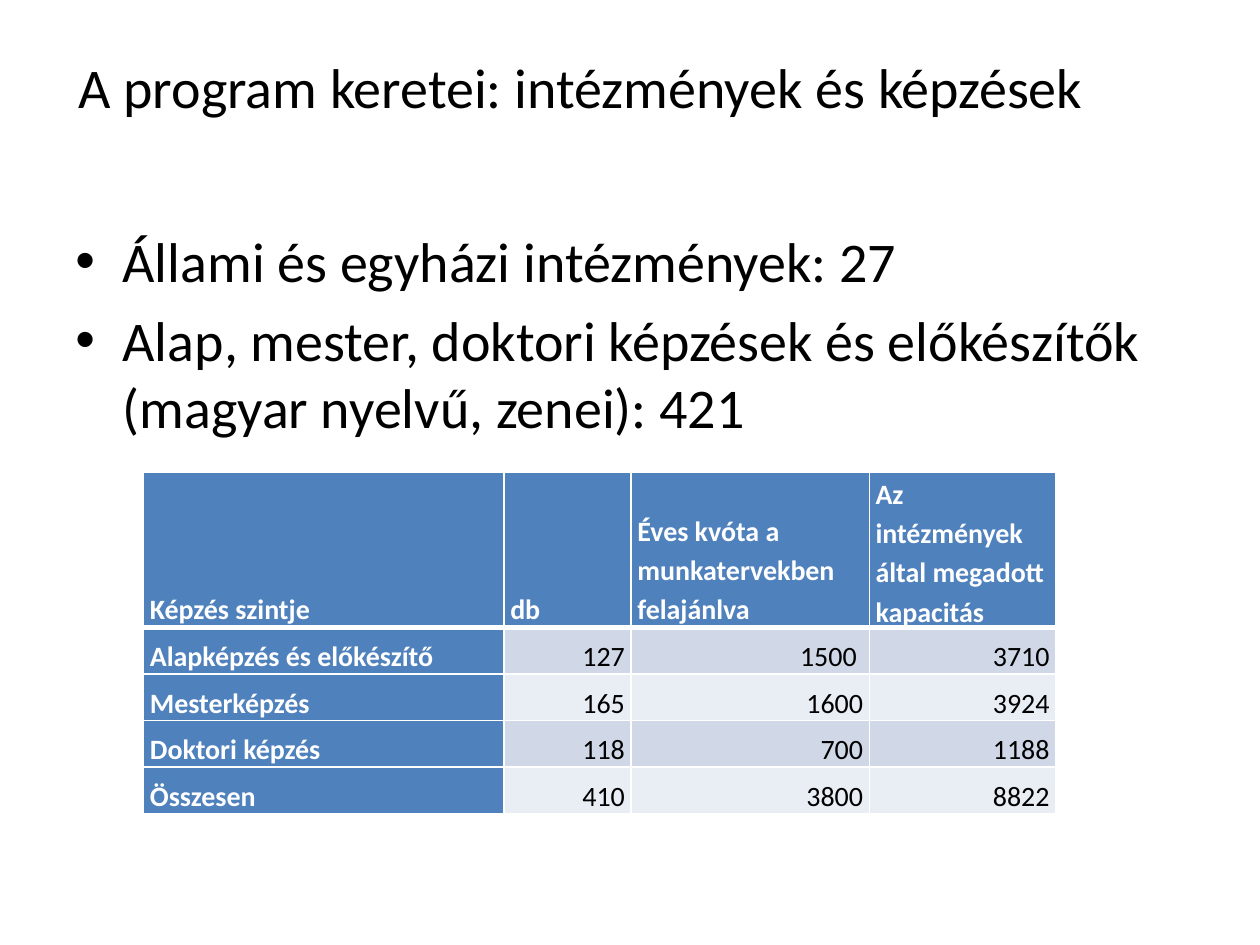
from dataclasses import dataclass

from lxml import etree
from pptx import Presentation
from pptx.dml.color import RGBColor
from pptx.enum import text
from pptx.oxml import ns
from pptx.util import Pt

FONT = "Calibri"
BLACK = RGBColor(0x00, 0x00, 0x00)
WHITE = RGBColor(0xFF, 0xFF, 0xFF)
BLUE = RGBColor(0x4F, 0x81, 0xBD)
BANDS = (RGBColor(0xD0, 0xD8, 0xE8), RGBColor(0xE9, 0xED, 0xF4))

BODY_SIZE = 32
TABLE_SIZE = 16
COLUMN_WIDTHS = (205.9, 72.7, 136.1, 106.6)
HEADER_HEIGHT = 88.6
ROW_HEIGHT = 26.6


@dataclass(frozen=True)
class Area:
    left: float
    top: float
    width: float
    height: float

    def lengths(self) -> tuple:
        return Pt(self.left), Pt(self.top), Pt(self.width), Pt(self.height)


@dataclass(frozen=True)
class Training:
    level: str
    count: str
    quota: str
    capacity: str

    def values(self) -> tuple:
        return self.level, self.count, self.quota, self.capacity


TITLE = "A program keretei: intézmények és képzések"
POINTS = (
    "Állami és egyházi intézmények: 27",
    "Alap, mester, doktori képzések és előkészítők (magyar nyelvű, zenei): 421",
)
TRAININGS = (
    Training("Képzés szintje", "db", "Éves kvóta a munkatervekben felajánlva",
             "Az intézmények által megadott kapacitás"),
    Training("Alapképzés és előkészítő", "127", "1500 ", "3710"),
    Training("Mesterképzés", "165", "1600", "3924"),
    Training("Doktori képzés", "118", "700", "1188"),
    Training("Összesen", "410", "3800", "8822"),
)
TITLE_AREA = Area(36.7, 9.4, 590.4, 79.2)
BODY_AREA = Area(36, 126, 635.8, 356.4)
TABLE_AREA = Area(82.1, 270, sum(COLUMN_WIDTHS),
                  HEADER_HEIGHT + ROW_HEIGHT * (len(TRAININGS) - 1))


def add_span(para, words: str, size: float, color: RGBColor = BLACK,
             bold: bool = False) -> None:
    span = para.add_run()
    span.text = words
    span.font.name = FONT
    span.font.size = Pt(size)
    span.font.bold = bold
    span.font.color.rgb = color


def add_text_frame(page, area: Area):
    frame = page.shapes.add_textbox(*area.lengths()).text_frame
    frame.word_wrap = True
    return frame


def add_title(page) -> None:
    frame = add_text_frame(page, TITLE_AREA)
    frame.vertical_anchor = text.MSO_ANCHOR.MIDDLE
    para = frame.paragraphs[0]
    para.alignment = text.PP_ALIGN.CENTER
    add_span(para, TITLE, BODY_SIZE)


def set_bullet(para) -> None:
    """Give the paragraph a round bullet with a hanging indent."""
    properties = para._p.get_or_add_pPr()
    properties.set("marL", str(Pt(27)))
    properties.set("indent", str(-Pt(27)))
    etree.SubElement(properties, ns.qn("a:buFont"), typeface="Arial")
    etree.SubElement(properties, ns.qn("a:buChar"), char="•")


def add_points(page) -> None:
    frame = add_text_frame(page, BODY_AREA)
    for index, words in enumerate(POINTS):
        para = frame.add_paragraph() if index else frame.paragraphs[0]
        para.space_before = Pt(0.2 * BODY_SIZE)
        set_bullet(para)
        add_span(para, words, BODY_SIZE)


def set_borders(cell, bottom: float) -> None:
    """Draw white cell borders, placed before the fill as the schema asks."""
    properties = cell._tc.get_or_add_tcPr()
    widths = {"a:lnL": 1, "a:lnR": 1, "a:lnT": 1, "a:lnB": bottom}
    for index, (tag, width) in enumerate(widths.items()):
        line = etree.Element(ns.qn(tag), w=str(Pt(width)))
        fill = etree.SubElement(line, ns.qn("a:solidFill"))
        etree.SubElement(fill, ns.qn("a:srgbClr"), val=str(WHITE))
        properties.insert(index, line)


def fill_cell(cell, words: str, row: int, column: int) -> None:
    heading = row == 0 or column == 0
    cell.margin_left = cell.margin_right = Pt(3.6)
    cell.margin_top = cell.margin_bottom = Pt(0)
    cell.vertical_anchor = text.MSO_ANCHOR.BOTTOM
    cell.fill.solid()
    cell.fill.fore_color.rgb = BLUE if heading else BANDS[(row - 1) % 2]
    set_borders(cell, bottom=3 if row == 0 else 1)
    para = cell.text_frame.paragraphs[0]
    para.line_spacing = 1.15
    para.alignment = text.PP_ALIGN.LEFT if heading else text.PP_ALIGN.RIGHT
    add_span(para, words, TABLE_SIZE, WHITE if heading else BLACK, heading)


def add_training_table(page) -> None:
    table = page.shapes.add_table(
        len(TRAININGS), len(COLUMN_WIDTHS), *TABLE_AREA.lengths()).table
    table.first_col = True
    for column, width in zip(table.columns, COLUMN_WIDTHS):
        column.width = Pt(width)
    for row, training in enumerate(TRAININGS):
        table.rows[row].height = Pt(ROW_HEIGHT if row else HEADER_HEIGHT)
        for column, words in enumerate(training.values()):
            fill_cell(table.cell(row, column), words, row, column)


def main() -> None:
    deck = Presentation()
    deck.slide_width, deck.slide_height = Pt(720), Pt(540)
    page = deck.slides.add_slide(deck.slide_layouts[6])
    add_title(page)
    add_points(page)
    add_training_table(page)
    deck.save("out.pptx")


if __name__ == "__main__":
    main()
